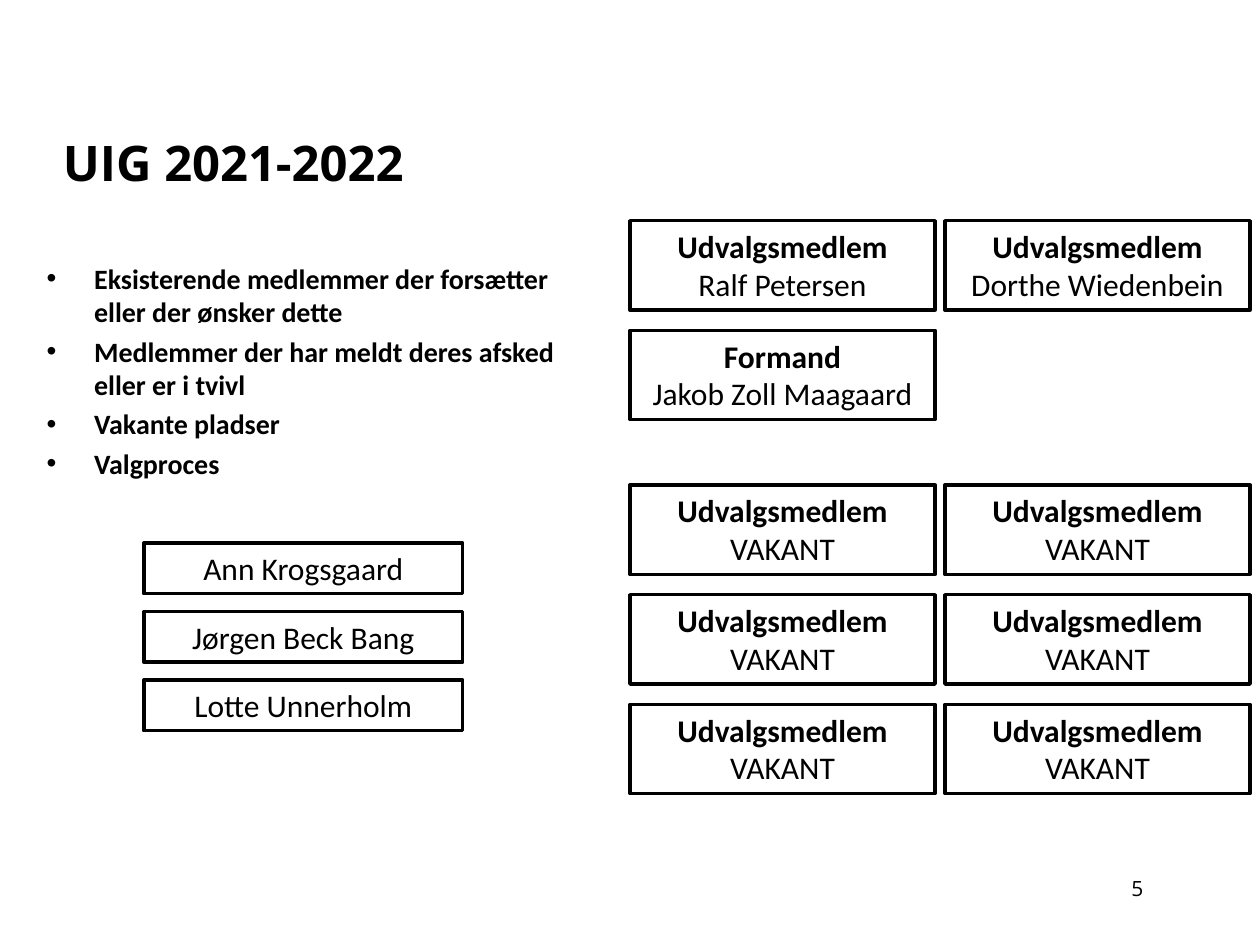
from lxml.etree import SubElement
from pptx import Presentation
from pptx.dml.color import RGBColor
from pptx.enum.shapes import MSO_SHAPE
from pptx.enum.text import MSO_ANCHOR, PP_ALIGN
from pptx.oxml.ns import qn
from pptx.util import Cm, Pt

TITLE = "UIG 2021-2022"
PAGE_NUMBER = "5"
TOPICS = [
    "Eksisterende medlemmer der forsætter eller der ønsker dette",
    "Medlemmer der har meldt deres afsked eller er i tvivl",
    "Vakante pladser",
    "Valgproces",
]
MEMBER = "Udvalgsmedlem"
VACANT = (MEMBER, "VAKANT")
CURRENT_ROWS = [
    [(MEMBER, "Ralf Petersen"), (MEMBER, "Dorthe Wiedenbein")],
    [("Formand", "Jakob Zoll Maagaard")],
]
VACANT_ROWS = [[VACANT, VACANT]] * 3
LEAVING_ROWS = [[("Ann Krogsgaard",)], [("Jørgen Beck Bang",)], [("Lotte Unnerholm",)]]

THEME = {
    "ink": RGBColor(0, 0, 0),
    "paper": RGBColor(255, 255, 255),
    "heading_font": "Open Sans",
    "body_font": "Calibri",
    "title_size": Pt(28),
    "card_size": Pt(18),
    "topic_size": Pt(16),
    "number_size": Pt(12),
    "outline": Pt(2),
}


def write(frame, text, *, size, font, bold=False, align=PP_ALIGN.LEFT,
          first=True, bullet=False, space_before=Pt(0)):
    paragraph = frame.paragraphs[0] if first else frame.add_paragraph()
    paragraph.alignment = align
    paragraph.space_before = Pt(0) if first else space_before
    if bullet:
        properties = paragraph._p.get_or_add_pPr()
        properties.set("marL", str(Cm(0.96)))
        properties.set("indent", str(-Cm(0.96)))
        SubElement(properties, qn("a:buFont"), typeface="Arial")
        SubElement(properties, qn("a:buChar"), char="•")
    run = paragraph.add_run()
    run.text = text
    run.font.size = size
    run.font.name = font
    run.font.bold = bold
    run.font.color.rgb = THEME["ink"]


def add_text_frame(slide, left, top, width, height, margins=None, anchor=MSO_ANCHOR.TOP):
    frame = slide.shapes.add_textbox(Cm(left), Cm(top), Cm(width), Cm(height)).text_frame
    frame.word_wrap = True
    frame.vertical_anchor = anchor
    if margins:
        margin_top, margin_bottom = margins
        frame.margin_left = frame.margin_right = Cm(0)
        frame.margin_top, frame.margin_bottom = Cm(margin_top), Cm(margin_bottom)
    return frame


def add_card(slide, lines, left, top, width, height):
    shape = slide.shapes.add_shape(
        MSO_SHAPE.RECTANGLE, Cm(left), Cm(top), Cm(width), Cm(height))
    shape.shadow.inherit = False
    shape.fill.solid()
    shape.fill.fore_color.rgb = THEME["paper"]
    shape.line.color.rgb = THEME["ink"]
    shape.line.width = THEME["outline"]
    frame = shape.text_frame
    frame.word_wrap = True
    frame.vertical_anchor = MSO_ANCHOR.TOP
    for index, line in enumerate(lines):
        write(frame, line, size=THEME["card_size"], font=THEME["body_font"],
              bold=index < len(lines) - 1, align=PP_ALIGN.CENTER, first=index == 0)


def add_cards(slide, rows, *, left, top, width, height, row_step, column_step=0):
    for row_index, row in enumerate(rows):
        for column_index, lines in enumerate(row):
            add_card(slide, lines, left + column_index * column_step,
                     top + row_index * row_step, width, height)


def main():
    presentation = Presentation()
    presentation.slide_width, presentation.slide_height = Cm(25.4), Cm(19.05)
    slide = presentation.slides.add_slide(presentation.slide_layouts[6])

    title = add_text_frame(slide, 1.27, 1.35, 17.53, 2.59, (0, 0.08), MSO_ANCHOR.BOTTOM)
    write(title, TITLE, size=THEME["title_size"], font=THEME["heading_font"], bold=True)

    topics = add_text_frame(slide, 0.94, 4.47, 10.69, 5.31, (0.8, 0))
    for index, topic in enumerate(TOPICS):
        write(topics, topic, size=THEME["topic_size"], font=THEME["body_font"], bold=True,
              first=index == 0, bullet=True, space_before=Pt(3.2))

    committee = dict(left=12.7, width=6.15, height=1.8, row_step=2.21, column_step=6.35)
    add_cards(slide, CURRENT_ROWS, top=4.45, **committee)
    add_cards(slide, VACANT_ROWS, top=9.78, **committee)
    add_cards(slide, LEAVING_ROWS, left=2.9, top=10.95, width=6.43, height=1.02, row_step=1.38)

    number = add_text_frame(slide, 22.56, 17.53, 1.57, 0.76)
    write(number, PAGE_NUMBER, size=THEME["number_size"], font=THEME["heading_font"])

    presentation.save("out.pptx")


if __name__ == "__main__":
    main()
